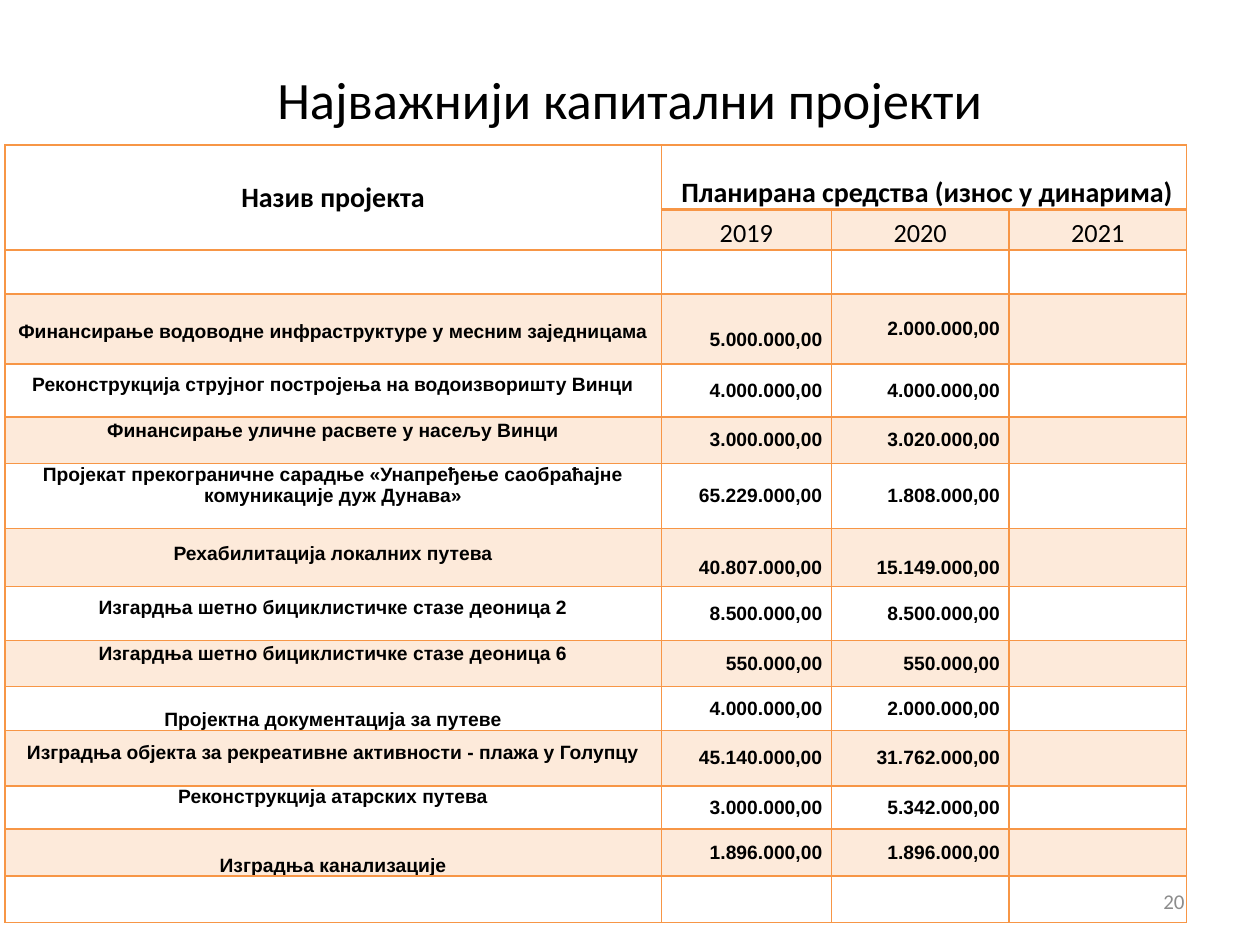
from lxml.etree import SubElement
from pptx import Presentation
from pptx.dml.color import RGBColor
from pptx.enum.text import MSO_ANCHOR, PP_ALIGN
from pptx.oxml.ns import qn
from pptx.util import Cm, Pt

ORANGE, PEACH, WHITE, BLACK, GREY = "F79646", "FDEADA", "FFFFFF", "000000", "8C8C8C"
SIDE, BLANK_LINE = 0.18, 0.44  # cell side margin and one 11 pt line, in cm


def write(tf, text, size, font="Calibri", bold=False, align=PP_ALIGN.CENTER, color=BLACK):
    tf.text = text
    for p in tf.paragraphs:
        p.alignment = align
        for r in p.runs:
            r.font.name, r.font.size, r.font.bold = font, Pt(size), bold
            r.font.color.rgb = RGBColor.from_string(color)


def style_cell(cell, fill, bottom_pt):
    """Give a cell its borders, fill and zero margins."""
    tcPr = cell._tc.get_or_add_tcPr()
    for side, width in (("L", 1), ("R", 1), ("T", 1), ("B", bottom_pt)):
        ln = SubElement(tcPr, qn(f"a:ln{side}"), w=str(Pt(width)))
        SubElement(SubElement(ln, qn("a:solidFill")), qn("a:srgbClr"), val=ORANGE)
    cell.fill.solid()
    cell.fill.fore_color.rgb = RGBColor.from_string(fill)
    cell.margin_left = cell.margin_right = cell.margin_top = cell.margin_bottom = 0


# name, 2019, 2020, blank line below the name, blank lines above the amounts
projects = [
    ("Финансирање водоводне инфраструктуре у месним заједницама",
     "5.000.000,00", "2.000.000,00", 1, (1, 0)),
    ("Реконструкција струјног постројења на водоизворишту Винци",
     "4.000.000,00", "4.000.000,00", 1, (0, 0)),
    ("Финансирање уличне расвете у насељу Винци",
     "3.000.000,00", "3.020.000,00", 1, (0, 0)),
    ("Пројекат прекограничне сарадње «Унапређење саобраћајне\nкомуникације дуж Дунава»",
     "65.229.000,00", "1.808.000,00", 1, (0, 0)),
    ("Рехабилитација локалних путева",
     "40.807.000,00", "15.149.000,00", 1, (1, 1)),
    ("Изгардња шетно бициклистичке стазе деоница 2",
     "8.500.000,00", "8.500.000,00", 1, (0, 0)),
    ("Изгардња шетно бициклистичке стазе деоница 6",
     "550.000,00", "550.000,00", 1, (0, 0)),
    ("Пројектна документација за путеве",
     "4.000.000,00", "2.000.000,00", 0, (0, 0)),
    ("Изградња објекта за рекреативне активности - плажа у Голупцу",
     "45.140.000,00", "31.762.000,00", 1, (0, 0)),
    ("Реконструкција атарских путева",
     "3.000.000,00", "5.342.000,00", 1, (0, 0)),
    ("Изградња канализације",
     "1.896.000,00", "1.896.000,00", 0, (0, 0)),
]
col_widths = [13.23, 3.43, 3.58, 3.58]
row_heights = [1.31, 0.81, 0.89, 1.41, 1.07, 0.93, 1.31, 1.17,
               1.09, 0.93, 0.89, 1.11, 0.85, 0.95, 0.93]

prs = Presentation()
prs.slide_width, prs.slide_height = Cm(25.4), Cm(19.05)
s = prs.slides.add_slide(prs.slide_layouts[5])

title = s.shapes.title
title.left, title.top, title.width, title.height = Cm(1.27), Cm(0.76), Cm(22.86), Cm(2.44)
title.text_frame.vertical_anchor = MSO_ANCHOR.MIDDLE
write(title.text_frame, "Најважнији капитални пројекти", 30)

table = s.shapes.add_table(len(row_heights), len(col_widths), Cm(0.1), Cm(2.92),
                           Cm(sum(col_widths)), Cm(sum(row_heights))).table
table.first_row = table.horz_banding = False
for col, width in zip(table.columns, col_widths):
    col.width = Cm(width)
for i, (row, height) in enumerate(zip(table.rows, row_heights)):
    row.height = Cm(height)
    for j, cell in enumerate(row.cells):
        shaded = i % 2 == 1 and (i > 1 or j > 0)
        header_end = i == (1 if j == 0 else 0)
        style_cell(cell, PEACH if shaded else WHITE, 2 if header_end else 1)

table.cell(0, 0).merge(table.cell(1, 0))
table.cell(0, 1).merge(table.cell(0, 3))
headers = [(0, 0, "Назив пројекта", 16), (0, 1, " Планирана средства (износ у динарима)", 16),
           (1, 1, "2019", 15), (1, 2, "2020", 15), (1, 3, "2021", 15)]
for i, j, text, size in headers:
    cell = table.cell(i, j)
    cell.margin_left = cell.margin_right = Cm(SIDE)
    cell.vertical_anchor = MSO_ANCHOR.MIDDLE if j == 0 else MSO_ANCHOR.BOTTOM
    write(cell.text_frame, text, size, bold=i == 0)

for i, (name, y2019, y2020, below, above) in enumerate(projects, start=3):
    cell = table.cell(i, 0)
    cell.vertical_anchor = MSO_ANCHOR.BOTTOM
    cell.margin_bottom = Cm(BLANK_LINE * below)
    write(cell.text_frame, name, 11, "Arial", True)
    for j, (amount, lines) in enumerate(zip((y2019, y2020), above), start=1):
        cell = table.cell(i, j)
        cell.vertical_anchor = MSO_ANCHOR.MIDDLE
        cell.margin_left = cell.margin_right = Cm(SIDE)
        cell.margin_top = Cm(BLANK_LINE * lines)
        write(cell.text_frame, amount, 11, "Arial", True, PP_ALIGN.RIGHT)

number = s.shapes.add_textbox(Cm(18.21), Cm(17.65), Cm(5.92), Cm(1.02))
number.text_frame.word_wrap = True
number.text_frame.vertical_anchor = MSO_ANCHOR.MIDDLE
write(number.text_frame, "20", 12, align=PP_ALIGN.RIGHT, color=GREY)

prs.save("out.pptx")
